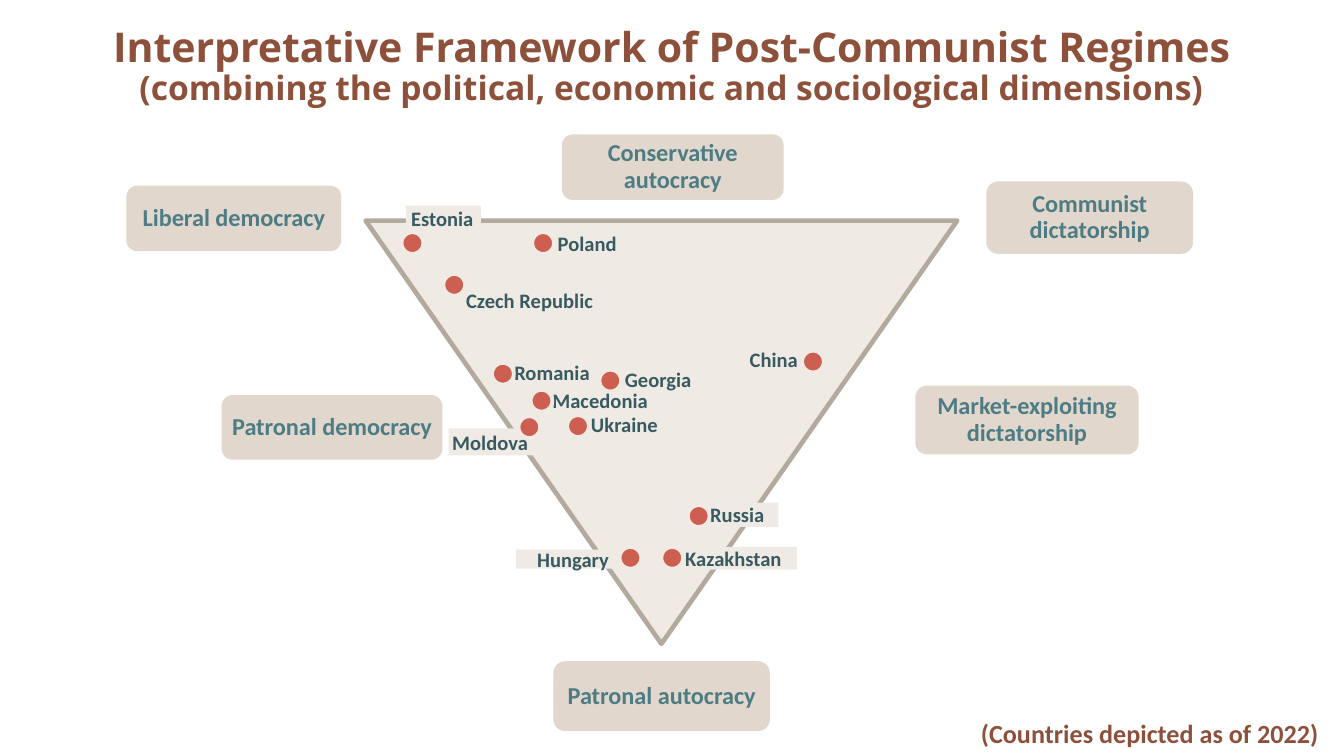
"""Build a slide that places post-communist countries in a triangle of regime types."""
from lxml.etree import SubElement
from pptx import Presentation
from pptx.dml.color import RGBColor
from pptx.enum.shapes import MSO_SHAPE
from pptx.enum.text import MSO_ANCHOR, PP_ALIGN
from pptx.oxml.ns import qn
from pptx.util import Cm, Pt

LEFT, CENTER, RIGHT = PP_ALIGN.LEFT, PP_ALIGN.CENTER, PP_ALIGN.RIGHT
SIDE = (0.25, 0.25)

REGIMES = [
    ("Communist dictatorship", (18.64, 3.43, 3.91, 1.37)),
    ("Liberal democracy", (2.39, 3.51, 4.06, 1.24)),
    ("Patronal autocracy", (10.46, 12.5, 4.09, 1.32)),
    ("Conservative autocracy", (10.62, 2.54, 4.19, 1.24)),
    ("Market-exploiting dictatorship", (17.3, 7.29, 4.22, 1.3)),
    ("Patronal democracy", (4.19, 7.47, 4.17, 1.22)),
]

COUNTRIES = [
    ("China", (15.16, 6.63), (13.89, 6.58, 1.47, 0.41), CENTER, False, SIDE),
    ("Poland", (10.06, 4.39), (10.29, 4.39, 1.8, 0.43), LEFT, False, SIDE),
    ("Estonia", (7.59, 4.39), (7.67, 3.89, 1.42, 0.46), LEFT, True, (0.1, 0.1)),
    ("Romania", (9.3, 6.86), (9.47, 6.88, 1.98, 0.3), LEFT, False, SIDE),
    ("Macedonia", (10.03, 7.37), (10.19, 7.24, 2.36, 0.64), LEFT, False, SIDE),
    ("Georgia", (11.33, 6.99), (11.56, 6.99, 1.85, 0.36), LEFT, False, SIDE),
    ("Ukraine", (10.72, 7.85), (10.92, 7.72, 1.88, 0.61), LEFT, False, SIDE),
    ("Hungary", (11.71, 10.34), (9.75, 10.39, 2.01, 0.36), RIGHT, True, SIDE),
    ("Russia", (13, 9.55), (13.16, 9.5, 1.55, 0.46), CENTER, True, SIDE),
    ("Kazakhstan", (12.5, 10.34), (12.7, 10.34, 2.36, 0.43), LEFT, True, SIDE),
    ("Czech Republic", (8.38, 5.18), (8.56, 5.38, 3, 0.61), LEFT, False, SIDE),
    ("Moldova", (9.8, 7.87), (8.48, 8.1, 1.6, 0.51), RIGHT, True, (0, 0.1)),
]


def color(value):
    return RGBColor.from_string(value)


class RegimeSlide:
    """Hold the style and the slide, and add each kind of element."""

    body_font, title_font = "Calibri", "Open Sans"
    heading, regime_text, country_text = "8D503B", "4D7C85", "385A61"
    sand, edge, regime_fill, dot_fill = "EFEAE4", "B3A99D", "C7B09A", "CD5F50"
    dot_size = 0.41

    def __init__(self, slide):
        self.slide = slide

    def shape(self, preset, box, fill, line=None, weight=0):
        shape = self.slide.shapes.add_shape(preset, *map(Cm, box))
        shape.shadow.inherit = False
        shape.fill.solid()
        shape.fill.fore_color.rgb = color(fill)
        if line:
            shape.line.color.rgb = color(line)
            shape.line.width = Pt(weight)
        else:
            shape.line.fill.background()
        return shape

    def add_text(self, shape, lines, ink, font, align=LEFT, sides=SIDE,
                 anchor=MSO_ANCHOR.MIDDLE, spacing=None):
        frame = shape.text_frame
        frame.word_wrap = True
        frame.vertical_anchor = anchor
        frame.margin_left, frame.margin_right = map(Cm, sides)
        frame.margin_top = frame.margin_bottom = Cm(0.13)
        paragraph = frame.paragraphs[0]
        paragraph.alignment = align
        paragraph.line_spacing = spacing
        for index, (text, size) in enumerate(lines):
            if index:
                paragraph.add_line_break()
            run = paragraph.add_run()
            run.text = text
            run.font.name = font
            run.font.size = Pt(size)
            run.font.bold = True
            run.font.color.rgb = color(ink)

    def textbox(self, box):
        return self.slide.shapes.add_textbox(*map(Cm, box))

    def title(self, lines):
        self.add_text(self.textbox((0.3, 0, 24.79, 2.54)), lines, self.heading,
                      self.title_font, CENTER, spacing=0.9)

    def footnote(self, text):
        self.add_text(self.textbox((18.29, 13.44, 7.11, 0.86)), [(text, 14)],
                      self.heading, self.body_font, anchor=MSO_ANCHOR.TOP)

    def triangle(self, box):
        self.shape(MSO_SHAPE.ISOSCELES_TRIANGLE, box, self.sand, self.edge, 2.5).rotation = 180

    def regime(self, text, box):
        shape = self.shape(MSO_SHAPE.ROUNDED_RECTANGLE, box, self.regime_fill)
        tint = shape.element.spPr.find(qn("a:solidFill"))[0]
        SubElement(tint, qn("a:alpha"), val="50000")
        self.add_text(shape, [(text, 13)], self.regime_text, self.body_font,
                      CENTER, (0.05, 0.05), spacing=0.9)

    def label(self, text, box, align, filled, sides):
        shape = self.shape(MSO_SHAPE.RECTANGLE, box, self.sand) if filled else self.textbox(box)
        self.add_text(shape, [(text, 11)], self.country_text, self.body_font, align, sides)

    def dot(self, corner):
        self.shape(MSO_SHAPE.OVAL, (*corner, self.dot_size, self.dot_size),
                   self.dot_fill, self.sand, 2)


def main():
    deck = Presentation()
    deck.slide_width, deck.slide_height = Cm(25.4), Cm(14.29)
    framework = RegimeSlide(deck.slides.add_slide(deck.slide_layouts[6]))
    framework.triangle((6.91, 4.17, 11.18, 8))
    for regime, box in REGIMES:
        framework.regime(regime, box)
    framework.title([
        ("Interpretative Framework of Post-Communist Regimes", 22),
        ("(combining the political, economic and sociological dimensions)", 18),
    ])
    framework.footnote("(Countries depicted as of 2022)")
    for country, _, *label in COUNTRIES:
        framework.label(country, *label)
    for _, corner, *_ in COUNTRIES:
        framework.dot(corner)
    deck.save("out.pptx")


if __name__ == "__main__":
    main()
